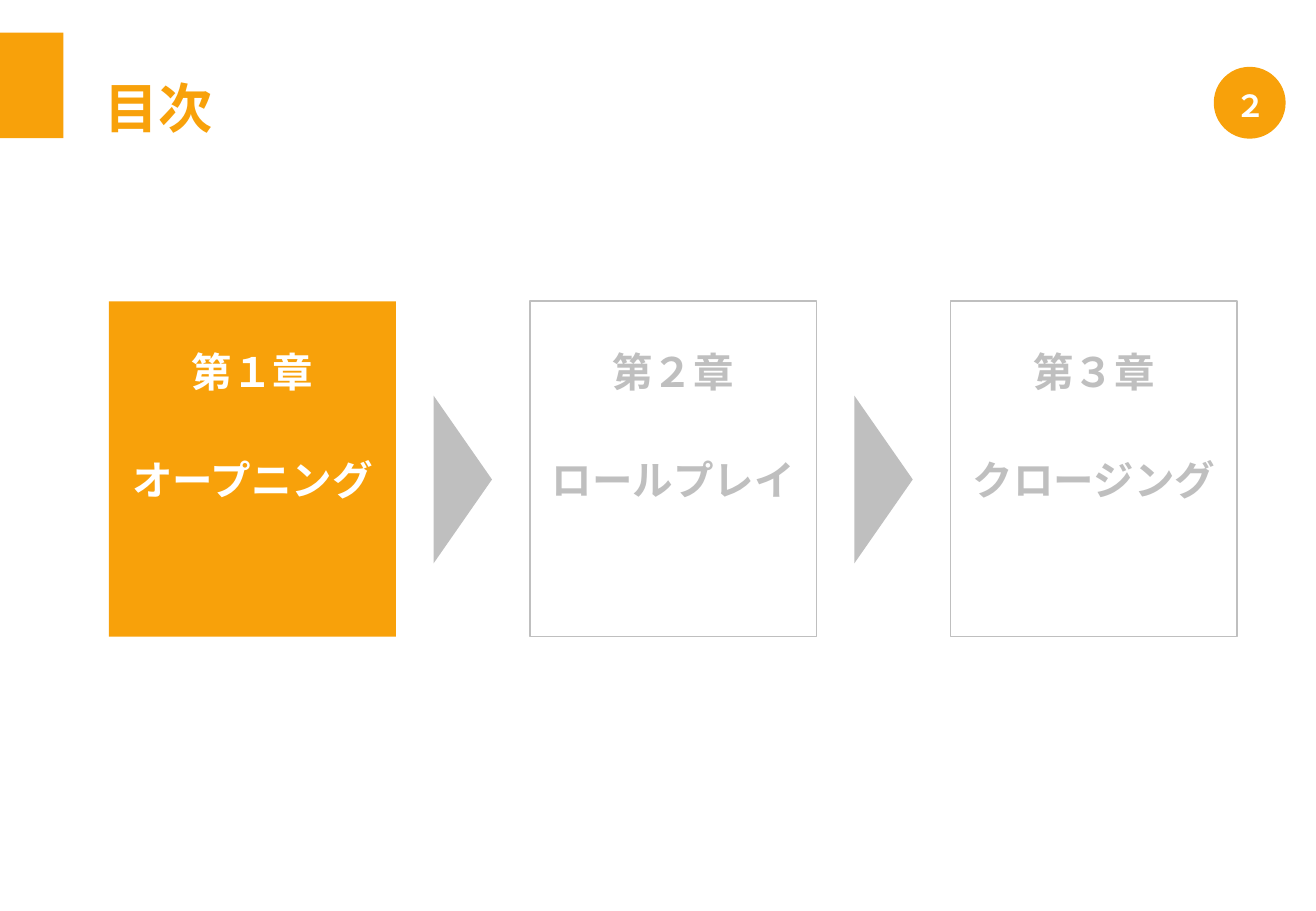
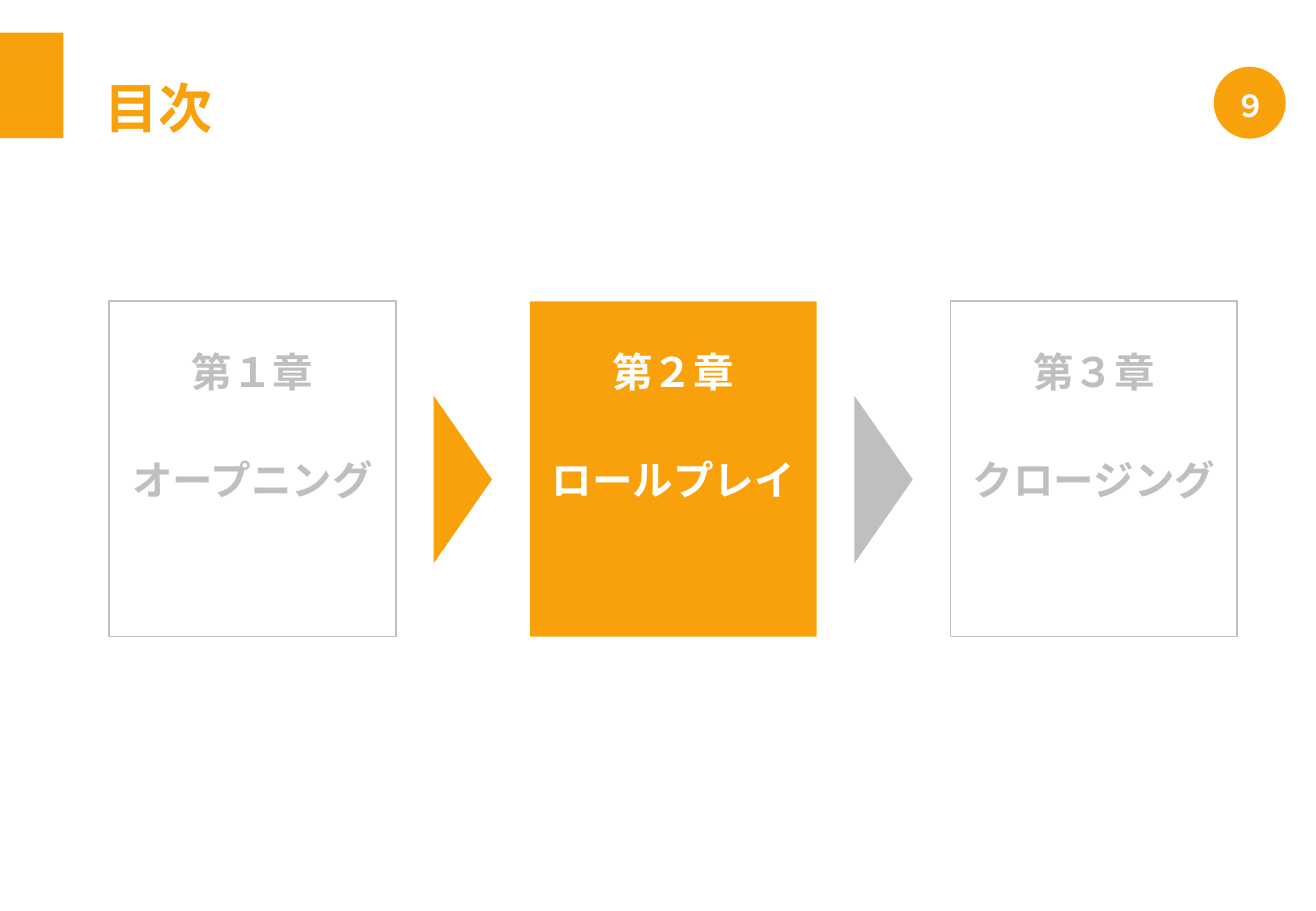
from dataclasses import dataclass

from lxml import etree
from pptx import Presentation
from pptx.dml.color import RGBColor
from pptx.enum import lang, shapes, text
from pptx.oxml import ns
from pptx.util import Pt

# Content
TITLE = "目次"
CHAPTERS = [
    ("第１章", "オープニング"),
    ("第２章", "ロールプレイ"),
    ("第３章", "クロージング"),
]
SLIDES = [("２", 0), ("９", 1)]  # page number, index of the current chapter


@dataclass(frozen=True)
class Theme:
    accent: RGBColor = RGBColor(0xF8, 0xA1, 0x0A)
    muted: RGBColor = RGBColor(0xBF, 0xBF, 0xBF)
    white: RGBColor = RGBColor(0xFF, 0xFF, 0xFF)
    font: str = "Roboto"
    title: int = 32
    chapter: int = 24
    page: int = 18


T = Theme()

# Layout, in points
SLIDE_W, SLIDE_H = 780, 540
BAND = (0, 19.4, 37.6, 62.6)
TITLE_BOX = (54.7, 40.3, 208, 46)
PAGE_DOT = (719.4, 39.6, 42.6, 42.6)
CARD_X, CARD_Y, CARD_W, CARD_H = 64.6, 178.6, 170, 198.8
PITCH = 249.4
LABEL_DY, LABEL_H = (23.8, 87.8), 36
ARROW_W, ARROW_H, ARROW_MID_Y = 99.4, 34.6, 284.2


def pts(*lengths):
    return [Pt(v) for v in lengths]


def add_run(p, content, size, color):
    r = p.add_run()
    r.text = content
    f = r.font
    f.size, f.bold, f.name = Pt(size), True, T.font
    f.color.rgb = color
    f.language_id = lang.MSO_LANGUAGE_ID.JAPANESE
    # East Asian characters take the same font
    ea = etree.SubElement(r._r.get_or_add_rPr(), ns.qn("a:ea"))
    ea.set("typeface", T.font)


def add_shape(s, kind, box, fill=None, line=None):
    sp = s.shapes.add_shape(kind, *pts(*box))
    sp.shadow.inherit = False
    if fill is None:
        sp.fill.background()
    else:
        sp.fill.solid()
        sp.fill.fore_color.rgb = fill
    if line is None:
        sp.line.fill.background()
    else:
        sp.line.color.rgb = line
        sp.line.width = Pt(1)
    return sp


def add_frame(s, page):
    """Band, title and page number shared by all slides."""
    add_shape(s, shapes.MSO_SHAPE.RECTANGLE, BAND, T.accent)

    title = s.shapes.title
    title.left, title.top, title.width, title.height = pts(*TITLE_BOX)
    tf = title.text_frame
    tf.auto_size = text.MSO_AUTO_SIZE.NONE
    tf.vertical_anchor = text.MSO_ANCHOR.TOP
    tf.paragraphs[0].alignment = text.PP_ALIGN.LEFT
    add_run(tf.paragraphs[0], TITLE, T.title, T.accent)

    dot = add_shape(s, shapes.MSO_SHAPE.OVAL, PAGE_DOT, T.accent)
    tf = dot.text_frame
    tf.word_wrap = False
    tf.margin_left, tf.margin_top, tf.margin_right, tf.margin_bottom = pts(1.4, 3.6, 0, 0)
    tf.vertical_anchor = text.MSO_ANCHOR.MIDDLE
    tf.paragraphs[0].alignment = text.PP_ALIGN.CENTER
    add_run(tf.paragraphs[0], page, T.page, T.white)


def add_card(s, x, labels, current):
    fill, line, color = (T.accent, None, T.white) if current else (None, T.muted, T.muted)
    add_shape(s, shapes.MSO_SHAPE.RECTANGLE, (x, CARD_Y, CARD_W, CARD_H), fill, line)
    for label, dy in zip(labels, LABEL_DY):
        tf = s.shapes.add_textbox(*pts(x, CARD_Y + dy, CARD_W, LABEL_H)).text_frame
        tf.word_wrap = True
        p = tf.paragraphs[0]
        p.alignment = text.PP_ALIGN.CENTER
        add_run(p, label, T.chapter, color)


def add_arrow(s, mid_x, color):
    box = (mid_x - ARROW_W / 2, ARROW_MID_Y - ARROW_H / 2, ARROW_W, ARROW_H)
    add_shape(s, shapes.MSO_SHAPE.ISOSCELES_TRIANGLE, box, color).rotation = 90


def main():
    prs = Presentation()
    prs.slide_width, prs.slide_height = pts(SLIDE_W, SLIDE_H)
    for page, current in SLIDES:
        s = prs.slides.add_slide(prs.slide_layouts[5])
        add_frame(s, page)
        for i, labels in enumerate(CHAPTERS):
            x = CARD_X + i * PITCH
            add_card(s, x, labels, i == current)
            if i > 0:  # arrow centred in the gap before this card
                gap = PITCH - CARD_W
                add_arrow(s, x - gap / 2, T.accent if i <= current else T.muted)
    prs.save("out.pptx")


if __name__ == "__main__":
    main()
